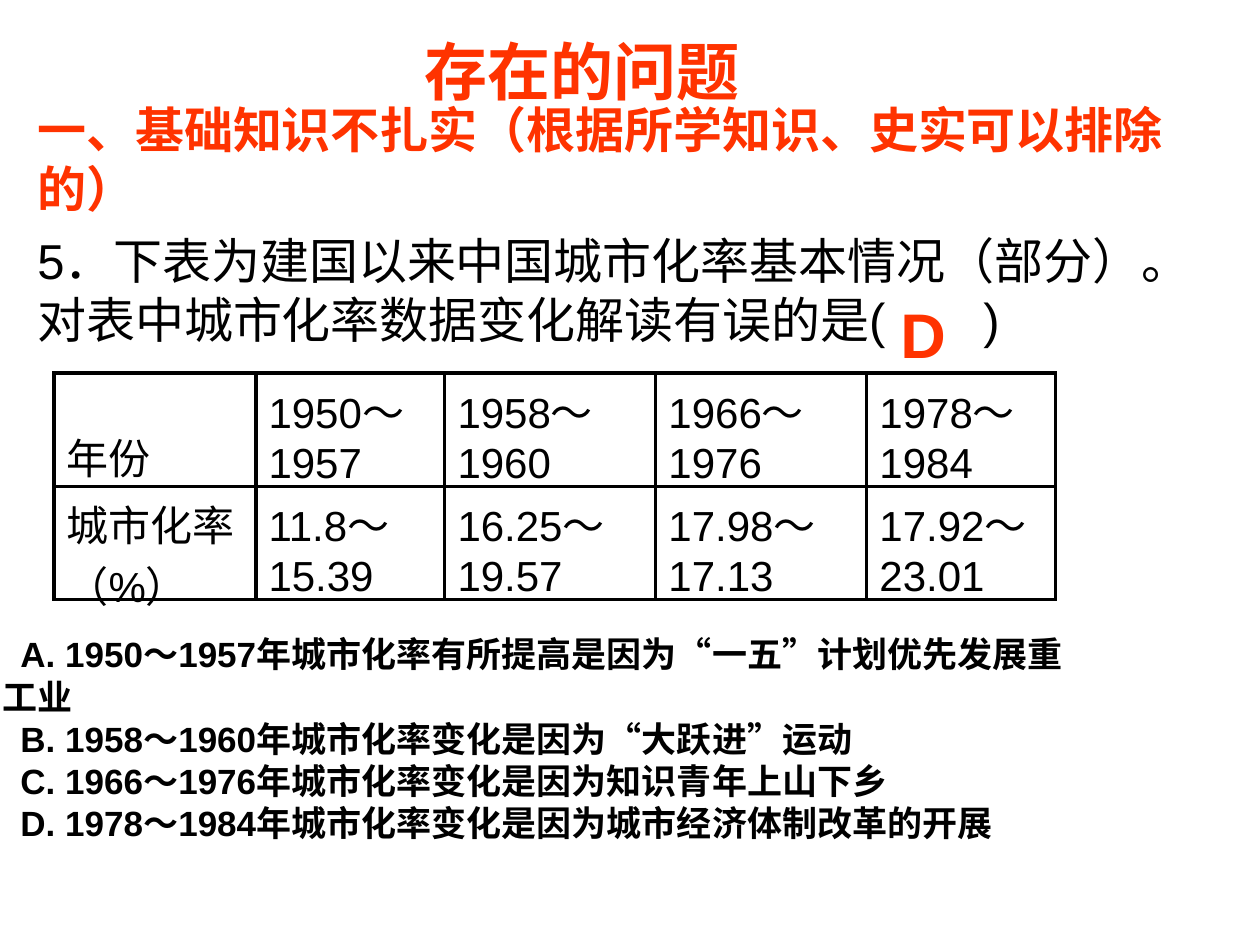
from lxml import etree
from pptx import Presentation
from pptx import util as u
from pptx.dml.color import RGBColor
from pptx.enum import shapes, text
from pptx.oxml.ns import qn

PX = 914400 // 126
COLORS = {"red": "FF3300", "black": "000000", "white": "FFFFFF"}
FONT = "Arial"

YEARS = ["年份", "1950～1957", "1958～1960", "1966～1976", "1978～1984"]
RATES = ["城市化率（%）", "11.8～15.39", "16.25～19.57", "17.98～17.13", "17.92～23.01"]
COLUMNS = [202, 189, 211, 211, 189]
QUESTION = ["5．下表为建国以来中国城市化率基本情况（部分）。",
            "对表中城市化率数据变化解读有误的是(\u3000\u3000)"]
OPTIONS = ["A. 1950～1957年城市化率有所提高是因为“一五”计划优先发展重工业",
           "B. 1958～1960年城市化率变化是因为“大跃进”运动",
           "C. 1966～1976年城市化率变化是因为知识青年上山下乡",
           "D. 1978～1984年城市化率变化是因为城市经济体制改革的开展"]


def rgb(name):
    return RGBColor.from_string(COLORS[name])


def emu(box):
    return [v * PX for v in box]


def write(tf, lines, size, color="black", bold=False, indent=0):
    """Fill a text frame with one left-aligned paragraph per line."""
    for i, line in enumerate(lines):
        p = tf.paragraphs[0] if i == 0 else tf.add_paragraph()
        p.text = line
        p.alignment = text.PP_ALIGN.LEFT
        if indent:
            pPr = p._p.get_or_add_pPr()
            pPr.set("marL", "0")
            pPr.set("indent", str(indent * PX))
        p.font.name = FONT
        p.font.size = u.Pt(size)
        p.font.bold = bold
        p.font.color.rgb = rgb(color)


def add_text(s, box, lines, size, anchor=text.MSO_ANCHOR.MIDDLE, **style):
    tf = s.shapes.add_textbox(*emu(box)).text_frame
    tf.word_wrap = True
    tf.vertical_anchor = anchor
    write(tf, lines, size, **style)


def add_answer(s, box):
    sp = s.shapes.add_shape(shapes.MSO_SHAPE.RECTANGLE, *emu(box))
    sp.shadow.inherit = False
    sp.fill.solid()
    sp.fill.fore_color.rgb = rgb("white")
    sp.line.fill.background()
    tf = sp.text_frame
    tf.vertical_anchor = text.MSO_ANCHOR.TOP
    tf.margin_top = 13 * PX
    write(tf, ["D"], 36, color="red", bold=True)


def add_borders(cell):
    tcPr = cell._tc.get_or_add_tcPr()
    for i, side in enumerate(("a:lnL", "a:lnR", "a:lnT", "a:lnB")):
        ln = etree.Element(qn(side), w=str(u.Pt(2)))
        fill = etree.SubElement(ln, qn("a:solidFill"))
        etree.SubElement(fill, qn("a:srgbClr"), val=COLORS["black"])
        tcPr.insert(i, ln)


def add_rate_table(s, box):
    rows = [YEARS, RATES]
    table = s.shapes.add_table(len(rows), len(COLUMNS), *emu(box)).table
    table.first_row = table.horz_banding = False
    for column, width in zip(table.columns, COLUMNS):
        column.width = width * PX
    for r, values in enumerate(rows):
        table.rows[r].height = box[3] * PX // len(rows)
        for c, value in enumerate(values):
            cell = table.cell(r, c)
            cell.fill.background()
            cell.vertical_anchor = text.MSO_ANCHOR.MIDDLE
            write(cell.text_frame, [value], 24)
            add_borders(cell)
    label = table.cell(0, 0)
    label.vertical_anchor = text.MSO_ANCHOR.BOTTOM
    label.margin_bottom = 0


def build_slide(prs):
    s = prs.slides.add_slide(prs.slide_layouts[6])
    top = text.MSO_ANCHOR.TOP
    add_text(s, (25, 93, 1235, 130), ["一、基础知识不扎实（根据所学知识、史实可以排除的）"], 28,
             anchor=top, color="red", bold=True)
    add_text(s, (412, 26, 536, 88), ["存在的问题"], 36, anchor=top, color="red", bold=True)
    add_answer(s, (888, 283, 134, 88))
    add_text(s, (25, 224, 1200, 130), QUESTION, 28)
    add_rate_table(s, (54, 373, sum(COLUMNS), 226))
    add_text(s, (-10, 648, 1119, 180), OPTIONS, 20, bold=True, indent=18)


def main():
    prs = Presentation()
    prs.slide_width, prs.slide_height = emu((1260, 945))
    build_slide(prs)
    prs.save("out.pptx")


if __name__ == "__main__":
    main()
